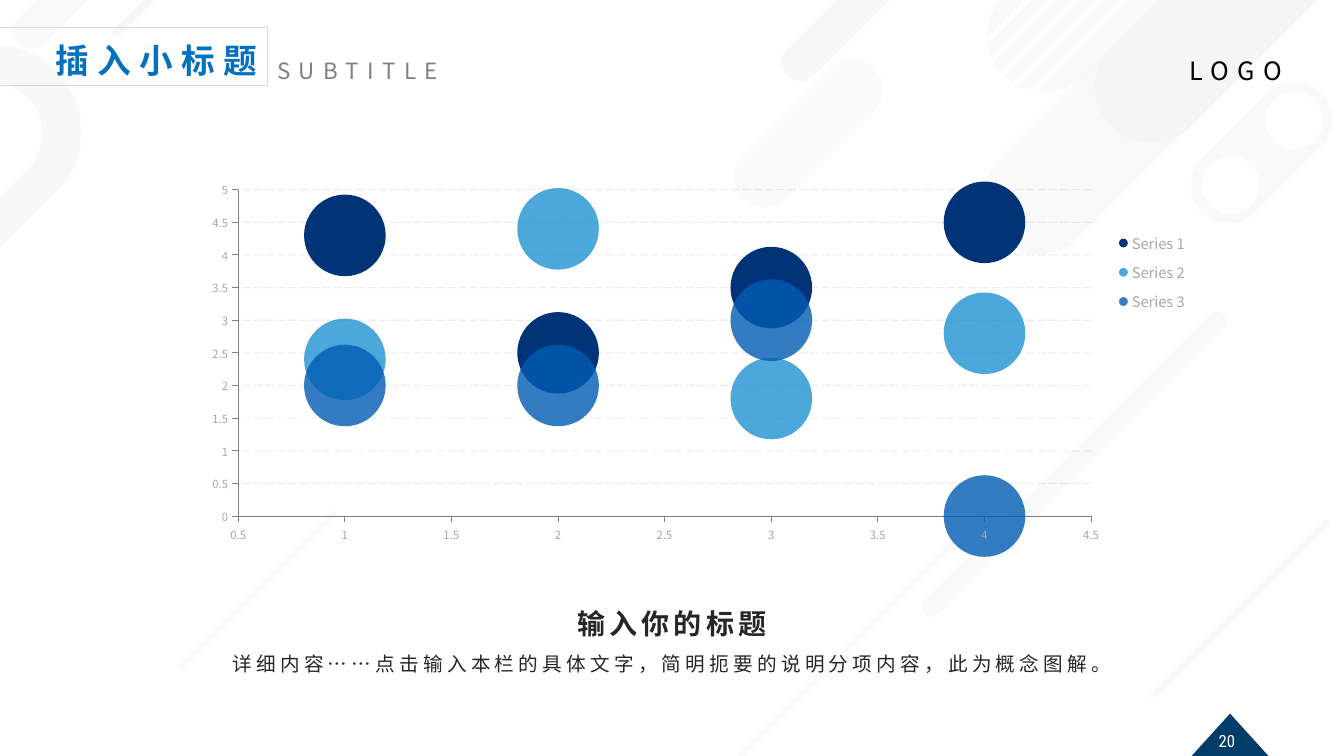
from lxml import etree
from pptx import Presentation
from pptx.chart.data import BubbleChartData
from pptx.dml.color import RGBColor
from pptx.enum.chart import XL_CHART_TYPE, XL_LEGEND_POSITION, XL_TICK_MARK
from pptx.enum.dml import MSO_LINE
from pptx.enum.shapes import MSO_SHAPE
from pptx.enum.text import MSO_ANCHOR, MSO_AUTO_SIZE, PP_ALIGN
from pptx.oxml.ns import qn
from pptx.util import Pt

PX = 9144
SLIDE = (0, 0, 1333, 750)
PILL, OVAL, TRIANGLE = MSO_SHAPE.ROUNDED_RECTANGLE, MSO_SHAPE.OVAL, MSO_SHAPE.ISOSCELES_TRIANGLE
LEFT, CENTER, RIGHT = PP_ALIGN.LEFT, PP_ALIGN.CENTER, PP_ALIGN.RIGHT
TOP, MIDDLE, BOTTOM = MSO_ANCHOR.TOP, MSO_ANCHOR.MIDDLE, MSO_ANCHOR.BOTTOM
OUTSIDE, NO_TICK = XL_TICK_MARK.OUTSIDE, XL_TICK_MARK.NONE
FONT, FONT_SUB, FONT_PAGE = "Noto Sans CJK SC", "Noto Sans CJK JP", "Roboto Condensed"
THEME = {
    "color": {"white": "FFFFFF", "pale": "F2F2F2", "navy": "013D68", "frame": "D9D9D9",
              "grid": "BFBFBF", "label": "A6A6A6", "gray": "808080", "title": "0070C0",
              "black": "000000", "body": "262626", "Series 1": "003378",
              "Series 2": "0184CB", "Series 3": "015CB3"},
    "size": {"title": 24, "sub": 16, "logo": 18, "page": 12, "head": 20, "body": 14,
             "axis": 8, "legend": 10.5},
}
BARS = [
    (1153, -288, 111, 614, 46), (1264, -399, 111, 614, 50), (1157, -449, 111, 614, 45),
    (1213, 68, 76, 167, 40), (253, 476, 5, 219, 45), (829, 444, 5, 417, 40),
    (1056, 251, 20, 419, 40), (772, 41, 60, 183, 37), (826, -81, 38, 183, 50),
    (1226, 480, 7, 249, 40), (157, -83, 9, 139, 60), (49, -75, 37, 138, 40),
]
HOLES = [(1255, 91), (1192, 155)]
HOOK = [
    [(0, 46)], [(8, 46)], [(20, 48), (32, 52), (42, 59)], [(56, 70)], [(67, 84)],
    [(89, 117), (85, 162), (56, 191)], [(0, 247)], [(0, 195)], [(28, 167)],
    [(47, 148), (47, 117), (28, 98)], [(21, 91), (12, 86), (3, 84)], [(0, 84)],
]
SERIES = [("Series 1", 100, (4.3, 2.5, 3.5, 4.5)), ("Series 2", 70, (2.4, 4.4, 1.8, 2.8)),
          ("Series 3", 80, (2, 2, 3, 0))]
CAPTION = [("输入你的标题", "head", True),
           ("详细内容……点击输入本栏的具体文字，简明扼要的说明分项内容，此为概念图解。", "body", False)]

def rgb(name):
    """Look up a theme colour."""
    return RGBColor.from_string(THEME["color"][name])

def emu(*lengths):
    """Turn px into EMU."""
    return [round(n * PX) for n in lengths]

def apply(target, **values):
    """Set attributes from format values."""
    for name, value in values.items():
        setattr(target, name, value)

def fade(element, percent):
    """Set the opacity of every colour in an element."""
    for clr in element.iter(qn("a:srgbClr")):
        etree.SubElement(clr, qn("a:alpha")).set("val", str(percent * 1000))

def paint(sp, color, opacity=100):
    """Give a shape a plain fill without line or shadow."""
    sp.shadow.inherit = False
    sp.fill.solid()
    sp.fill.fore_color.rgb = rgb(color)
    if opacity < 100:
        fade(sp._element.spPr, opacity)
    sp.line.fill.background()

def add_figure(s, kind, box, color, opacity=100, rotation=0):
    """Add a filled preset shape."""
    sp = s.shapes.add_shape(kind, *emu(*box))
    paint(sp, color, opacity)
    if kind == PILL:
        sp.adjustments[0] = 0.5
    sp.rotation = rotation

def style_font(font, size, color, name=FONT, bold=False):
    """Set typeface, size, weight and colour of a font."""
    apply(font, size=Pt(THEME["size"][size]), name=name, bold=bold)
    font.color.rgb = rgb(color)

def write(p, text, size, color, font=FONT, bold=False, spacing=0, align=LEFT):
    """Write one formatted run into a paragraph."""
    p.alignment = align
    r = p.add_run()
    r.text = text
    style_font(r.font, size, color, font, bold)
    rPr = r._r.get_or_add_rPr()
    rPr.set("spc", str(spacing * 100))
    etree.SubElement(rPr, qn("a:ea")).set("typeface", font)

def frame(sp, anchor=TOP, wrap=True):
    """Set up the text frame of a shape and return it."""
    tf = sp.text_frame
    apply(tf, word_wrap=wrap, auto_size=MSO_AUTO_SIZE.NONE, vertical_anchor=anchor)
    return tf

def add_label(s, box, text, size, color, anchor=TOP, **style):
    """Add a one-line text box."""
    tf = frame(s.shapes.add_textbox(*emu(*box)), anchor, anchor == MIDDLE)
    write(tf.paragraphs[0], text, size, color, **style)

def add_hook(s, x, y):
    """Draw the curved band at the left edge."""
    points = []
    for segment in HOOK:
        if len(segment) == 1:
            points += segment
            continue
        curve = [points[-1], *segment]
        for t in (i / 12 for i in range(1, 13)):
            weights = ((1 - t) ** 3, 3 * t * (1 - t) ** 2, 3 * t * t * (1 - t), t ** 3)
            points.append(tuple(sum(w * c[k] for w, c in zip(weights, curve)) for k in (0, 1)))
    points = [emu(x + px, y + py) for px, py in points]
    builder = s.shapes.build_freeform(*points[0])
    builder.add_line_segments(points[1:], close=True)
    paint(builder.convert_to_shape(), "pale", 50)

def add_backdrop(s, box):
    """Place the pale slanted bars, holes and stripes."""
    x, y = box[:2]
    add_hook(s, x, y)
    for left, top, w, h, opacity in BARS:
        add_figure(s, PILL, (x + left, y + top, w, h), "pale", opacity, 45)
    for left, top in HOLES:
        add_figure(s, OVAL, (x + left, y + top, 57, 57), "white")
    for i in range(5):
        add_figure(s, PILL, (x + 970 + 24 * i, y - 239, 6, 570), "white", rotation=45)

def add_page_mark(s, box):
    """Place the page number on its triangle."""
    x, y, w, h = box
    add_figure(s, TRIANGLE, (x + 3, y, w - 3, h), "navy")
    add_label(s, (x, y + 13, 57, 28), "20", "page", "white", MIDDLE, font=FONT_PAGE, align=RIGHT)

def add_heading(s, box):
    """Place the framed title, the subtitle and the logo word."""
    x, y, w, h = box
    title = s.shapes.title
    s.shapes._spTree.append(title._element)
    title.left, title.top, title.width, title.height = emu(x, y, 378, h)
    title.line.color.rgb = rgb("frame")
    title.line.width = Pt(0.75)
    p = frame(title, BOTTOM).paragraphs[0]
    write(p, "插入小标题", "title", "title", bold=True, spacing=6, align=RIGHT)
    add_label(s, (x + 378, y + 25, 188, 37), "SUBTITLE", "sub", "gray", font=FONT_SUB, spacing=6)
    add_label(s, (x + w - 126, y + 23, 126, 40), "LOGO", "logo", "black", spacing=6)

def set_layout(element, index, **values):
    """Fix a chart part at shares of the chart area."""
    for old in element.findall(qn("c:layout")):
        element.remove(old)
    layout = etree.Element(qn("c:layout"))
    manual = etree.SubElement(layout, qn("c:manualLayout"))
    for name, value in values.items():
        etree.SubElement(manual, qn("c:" + name)).set("val", str(value))
    element.insert(index, layout)

def format_axis(axis, low, high, grid):
    """Set the range, ticks, labels and line of an axis."""
    apply(axis, minimum_scale=low, maximum_scale=high, major_unit=0.5, has_major_gridlines=grid,
          major_tick_mark=OUTSIDE, minor_tick_mark=NO_TICK)
    apply(axis.tick_labels, number_format="General", number_format_is_linked=False)
    axis.format.line.color.rgb = rgb("gray")
    axis.format.line.width = Pt(0.75)

def add_bubbles(s, box):
    """Place the bubble chart."""
    data = BubbleChartData()
    for name, _, values in SERIES:
        series = data.add_series(name)
        for x, value in enumerate(values, 1):
            series.add_data_point(x, value, 1)
    chart = s.shapes.add_chart(XL_CHART_TYPE.BUBBLE, *emu(*box), data).chart
    apply(chart, has_title=False, has_legend=True)
    style_font(chart.font, "axis", "label")
    plot, legend, axis = chart.plots[0], chart.legend, chart.value_axis
    plot.bubble_scale = 100
    for series, (name, opacity, _) in zip(plot.series, SERIES):
        series.format.fill.solid()
        series.format.fill.fore_color.rgb = rgb(name)
        series.format.line.fill.background()
        if opacity < 100:
            fade(series._element, opacity)
    format_axis(chart.category_axis, 0.5, 4.5, False)
    format_axis(axis, 0, 5, True)
    line = axis.major_gridlines.format.line
    line.color.rgb = rgb("grid")
    apply(line, width=Pt(0.75), dash_style=MSO_LINE.LONG_DASH)
    fade(axis._element.find(qn("c:majorGridlines")), 30)
    apply(legend, position=XL_LEGEND_POSITION.RIGHT, include_in_layout=False)
    style_font(legend.font, "legend", "label")
    set_layout(legend._element, 1, xMode="edge", yMode="edge", x=0.91, y=0.13, w=0.08, h=0.25)
    set_layout(plot._element.getparent(), 0, layoutTarget="inner", xMode="edge", yMode="edge",
               x=0.05, y=0.04, w=0.84, h=0.85)

def add_caption(s, box):
    """Place the centred caption below the chart."""
    tf = frame(s.shapes.add_textbox(*emu(*box)))
    for i, (text, size, bold) in enumerate(CAPTION):
        p = tf.add_paragraph() if i else tf.paragraphs[0]
        p.line_spacing = 1.5
        write(p, text, size, "body", bold=bold, spacing=3, align=CENTER)

def main():
    """Build and save the slide."""
    prs = Presentation()
    prs.slide_width, prs.slide_height = emu(*SLIDE[2:])
    s = prs.slides.add_slide(prs.slide_layouts[5])
    add_page_mark(s, (1178, 708, 81, 43))
    add_backdrop(s, SLIDE)
    add_heading(s, (-113, 27, 1409, 58))
    add_bubbles(s, (186, 173, 1007, 381))
    add_caption(s, (165, 580, 1003, 96))
    prs.save("out.pptx")

if __name__ == "__main__":
    main()
